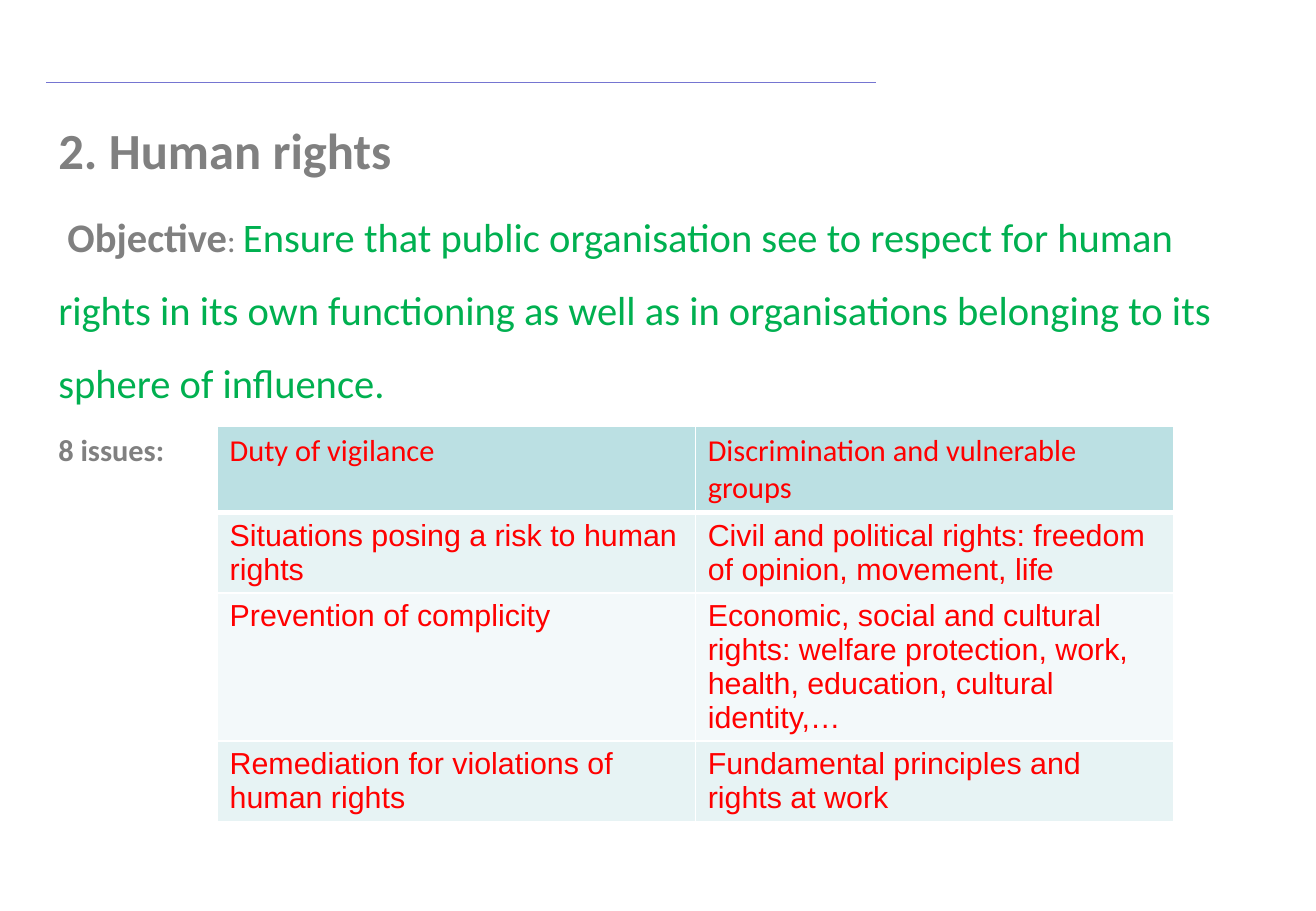
import pptx
import pptx.dml.color
import pptx.enum.shapes
import pptx.enum.text
import pptx.oxml
import pptx.oxml.ns
import pptx.util

WIDTH, HEIGHT = 10.83, 7.5
LEFT, TOP = 0.38 / WIDTH, 0.68 / HEIGHT
GREY, GREEN, RED, WHITE = "808080", "00B050", "FF0000", "FFFFFF"

HEADING = {"size": 30, "bold": True, "color": GREY}
LABEL = {"size": 24, "bold": True, "color": GREY}
COLON = {"size": 19, "bold": False, "color": GREY}
OBJECTIVE = {"size": 24, "bold": False, "color": GREEN}
ISSUES = {"size": 18, "bold": True, "color": GREY}
HEADER_CELL = {"size": 18, "bold": False, "color": RED}
BODY_CELL = HEADER_CELL | {"name": "Arial"}

PARAGRAPHS = [
    (0, [("2. Human rights", HEADING)]),
    (4.8, [
        (" Objective", LABEL),
        (": ", COLON),
        ("Ensure that public organisation see to respect for human rights in its own "
         "functioning as well as in organisations belonging to its sphere of influence.",
         OBJECTIVE),
    ]),
    (3.6, [("8 issues:", ISSUES)]),
]
ROWS = [
    (0.7, "BBE0E3", HEADER_CELL,
     ("Duty of vigilance", "Discrimination and vulnerable groups")),
    (0.66, "E7F3F4", BODY_CELL,
     ("Situations posing a risk to human rights",
      "Civil and political rights: freedom of opinion, movement, life")),
    (1.22, "F3F9FA", BODY_CELL,
     ("Prevention of complicity",
      "Economic, social and cultural rights: welfare protection, work, health, "
      "education, cultural identity,…")),
    (0.66, "E7F3F4", BODY_CELL,
     ("Remediation for violations of human rights",
      "Fundamental principles and rights at work")),
]


def rgb(value):
    """Turn a hex string into a colour."""
    return pptx.dml.color.RGBColor.from_string(value)


class SlideBuilder:
    """Hold the style and the current slide, and draw its elements."""

    font_name = "Calibri"

    def __init__(self, presentation):
        """Add a slide with a title and body layout."""
        self.presentation = presentation
        self.slide = presentation.slides.add_slide(presentation.slide_layouts[1])
        title = self.slide.shapes.title.element
        title.getparent().remove(title)

    def across(self, share):
        """Turn a share of the slide width into a length."""
        return round(self.presentation.slide_width * share)

    def down(self, share):
        """Turn a share of the slide height into a length."""
        return round(self.presentation.slide_height * share)

    def add_run(self, paragraph, text, style):
        """Add a formatted run to a paragraph."""
        run = paragraph.add_run()
        run.text = text
        values = {"name": self.font_name} | style
        run.font.color.rgb = rgb(values.pop("color"))
        values["size"] = pptx.util.Pt(values["size"])
        for attribute, value in values.items():
            setattr(run.font, attribute, value)

    def rule(self, left, right, top, color, weight):
        """Draw a horizontal line."""
        connector = self.slide.shapes.add_connector(
            pptx.enum.shapes.MSO_CONNECTOR.STRAIGHT,
            self.across(left), self.down(top), self.across(right), self.down(top))
        connector.line.color.rgb = rgb(color)
        connector.line.width = pptx.util.Pt(weight)
        connector.element.spPr.append(pptx.oxml.parse_xml(
            f'<a:effectLst {pptx.oxml.ns.nsdecls("a")}/>'))

    def body(self, left, top, width, height, paragraphs):
        """Place and fill the body placeholder."""
        shape = self.slide.placeholders[1]
        place = {"left": self.across(left), "top": self.down(top),
                 "width": self.across(width), "height": self.down(height)}
        for attribute, value in place.items():
            setattr(shape, attribute, value)
        frame = shape.text_frame
        frame.auto_size = pptx.enum.text.MSO_AUTO_SIZE.NONE
        for index, (space, runs) in enumerate(paragraphs):
            paragraph = frame.add_paragraph() if index else frame.paragraphs[0]
            properties = paragraph._p.get_or_add_pPr()
            properties.set("marL", "0")
            properties.set("indent", "0")
            properties.append(pptx.oxml.parse_xml(
                f'<a:buNone {pptx.oxml.ns.nsdecls("a")}/>'))
            paragraph.line_spacing = 1.5
            paragraph.space_before = pptx.util.Pt(space)
            for text, style in runs:
                self.add_run(paragraph, text, style)

    def borders(self, cell, color, weights):
        """Draw the four borders of a table cell."""
        properties = cell._tc.get_or_add_tcPr()
        for index, (side, weight) in enumerate(weights.items()):
            properties.insert(index, pptx.oxml.parse_xml(
                f'<a:ln{side} {pptx.oxml.ns.nsdecls("a")} w="{pptx.util.Pt(weight)}">'
                f'<a:solidFill><a:srgbClr val="{color}"/></a:solidFill></a:ln{side}>'))

    def table(self, left, top, width, rows):
        """Draw a table with equal columns."""
        columns = len(rows[0][3])
        height = sum(row[0] for row in rows) / HEIGHT
        table = self.slide.shapes.add_table(
            len(rows), columns, self.across(left), self.down(top),
            self.across(width), self.down(height)).table
        for row, (row_height, fill, style, texts) in enumerate(rows):
            table.rows[row].height = pptx.util.Inches(row_height)
            weights = {"L": 1, "R": 1, "T": 3 if row == 1 else 1, "B": 1 if row else 3}
            for column, text in enumerate(texts):
                cell = table.cell(row, column)
                cell.fill.solid()
                cell.fill.fore_color.rgb = rgb(fill)
                self.borders(cell, WHITE, weights)
                self.add_run(cell.text_frame.paragraphs[0], text, style)


def main():
    """Build the human rights slide."""
    presentation = pptx.Presentation()
    presentation.slide_width = pptx.util.Inches(WIDTH)
    presentation.slide_height = pptx.util.Inches(HEIGHT)
    builder = SlideBuilder(presentation)
    builder.rule(LEFT, 7.21 / WIDTH, TOP, "7575D1", 0.75)
    builder.body(LEFT, TOP, 10.07 / WIDTH, 6.22 / HEIGHT, PARAGRAPHS)
    builder.table(1.79 / WIDTH, 3.51 / HEIGHT, 7.87 / WIDTH, ROWS)
    presentation.save("out.pptx")


if __name__ == "__main__":
    main()
